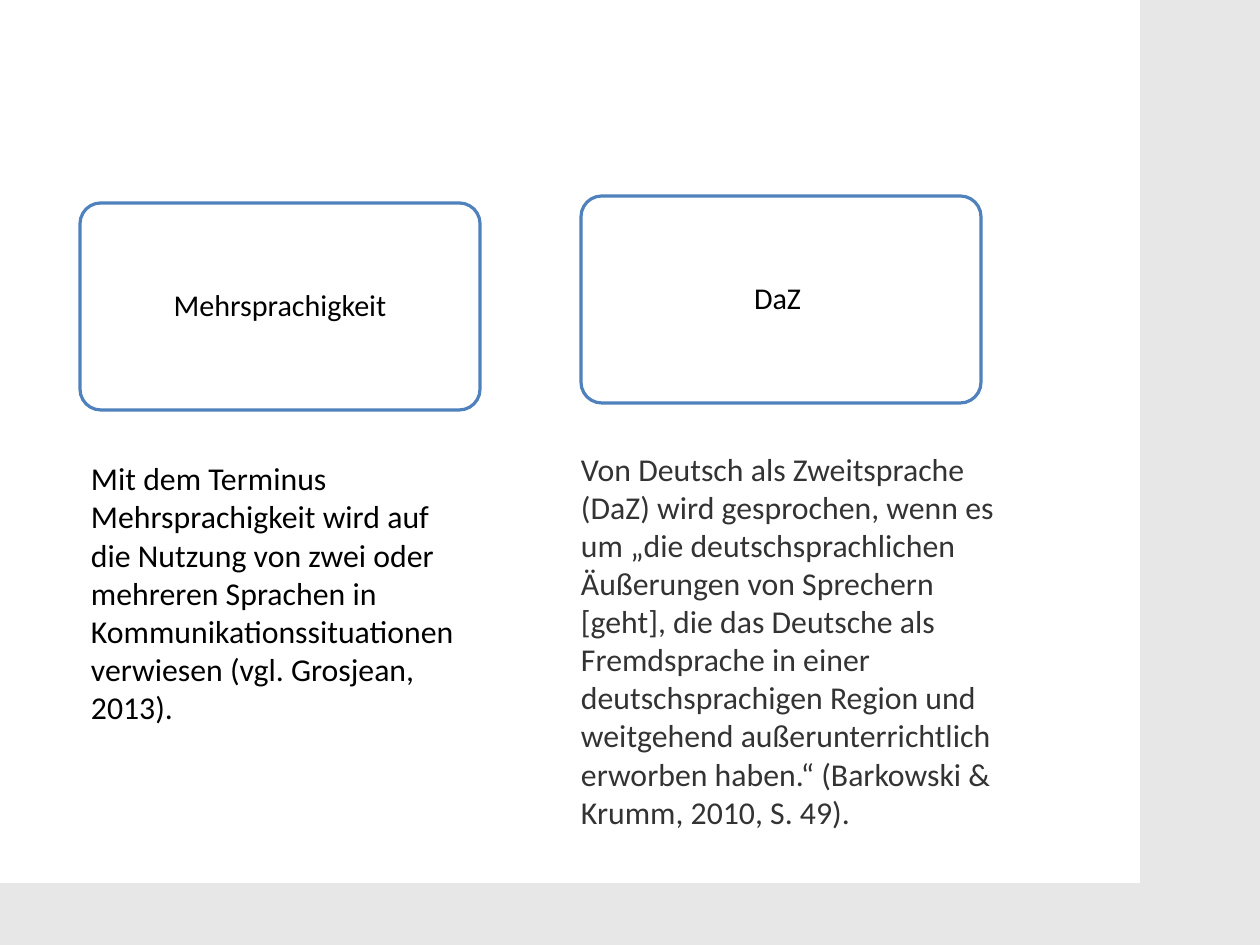
from dataclasses import dataclass
from pptx import Presentation
from pptx.dml.color import RGBColor
from pptx.enum.shapes import MSO_SHAPE
from pptx.enum.text import MSO_ANCHOR, PP_ALIGN
from pptx.util import Pt

PX = 8000


@dataclass(frozen=True)
class Theme:
    font: str = "Calibri"
    back: str = "E7E7E7"
    page: str = "FFFFFF"
    line: str = "4F81BD"
    ink: str = "000000"
    soft: str = "333333"
    head: int = 19
    body: int = 20
    edge: int = 2


THEME = Theme()


def emu(*px):
    return [n * PX for n in px]


def paint(fill, color):
    fill.solid()
    fill.fore_color.rgb = RGBColor.from_string(color)


def panel(slide, kind, box):
    shape = slide.shapes.add_shape(kind, *emu(*box))
    shape.shadow.inherit = False
    paint(shape.fill, THEME.page)
    return shape


def write(frame, text, size, color, align, anchor, pads):
    frame.word_wrap = True
    frame.vertical_anchor = anchor
    side, top = emu(*pads)
    frame.margin_left = frame.margin_right = side
    frame.margin_top = frame.margin_bottom = top
    para = frame.paragraphs[0]
    para.text = text
    para.alignment = align
    para.font.name = THEME.font
    para.font.size = Pt(size)
    para.font.color.rgb = RGBColor.from_string(color)
    return para


def page(slide, box):
    paint(slide.background.fill, THEME.back)
    panel(slide, MSO_SHAPE.RECTANGLE, box).line.fill.background()


def card(slide, box, text):
    shape = panel(slide, MSO_SHAPE.ROUNDED_RECTANGLE, box)
    shape.adjustments[0] = 0.1
    shape.line.color.rgb = RGBColor.from_string(THEME.line)
    shape.line.width = Pt(THEME.edge)
    para = write(shape.text_frame, text, THEME.head, THEME.ink,
                 PP_ALIGN.CENTER, MSO_ANCHOR.MIDDLE, (9, 9))
    para.line_spacing = 0.9


def note(slide, box, text, color, anchor, pads):
    frame = slide.shapes.add_textbox(*emu(*box)).text_frame
    write(frame, text, THEME.body, color, PP_ALIGN.LEFT, anchor, pads)


def main():
    deck = Presentation()
    deck.slide_width, deck.slide_height = emu(1260, 945)
    slide = deck.slides.add_slide(deck.slide_layouts[6])
    page(slide, (0, 0, 1140, 883))
    card(slide, (80, 203, 400, 207), "Mehrsprachigkeit")
    card(slide, (581, 196, 400, 207), "DaZ ")
    note(slide, (80, 453, 400, 319),
         "Mit dem Terminus Mehrsprachigkeit wird auf die Nutzung von zwei "
         "oder mehreren Sprachen in Kommunikationssituationen verwiesen "
         "(vgl. Grosjean, 2013).",
         THEME.ink, MSO_ANCHOR.TOP, (11, 6))
    note(slide, (581, 437, 429, 406),
         "Von Deutsch als Zweitsprache (DaZ) wird gesprochen, wenn es um "
         "„die deutschsprachlichen Äußerungen von Sprechern [geht], die das "
         "Deutsche als Fremdsprache in einer deutschsprachigen Region und "
         "weitgehend außerunterrichtlich erworben haben.“ (Barkowski & "
         "Krumm, 2010, S. 49).",
         THEME.soft, MSO_ANCHOR.MIDDLE, (0, 10))
    deck.save("out.pptx")


if __name__ == "__main__":
    main()
